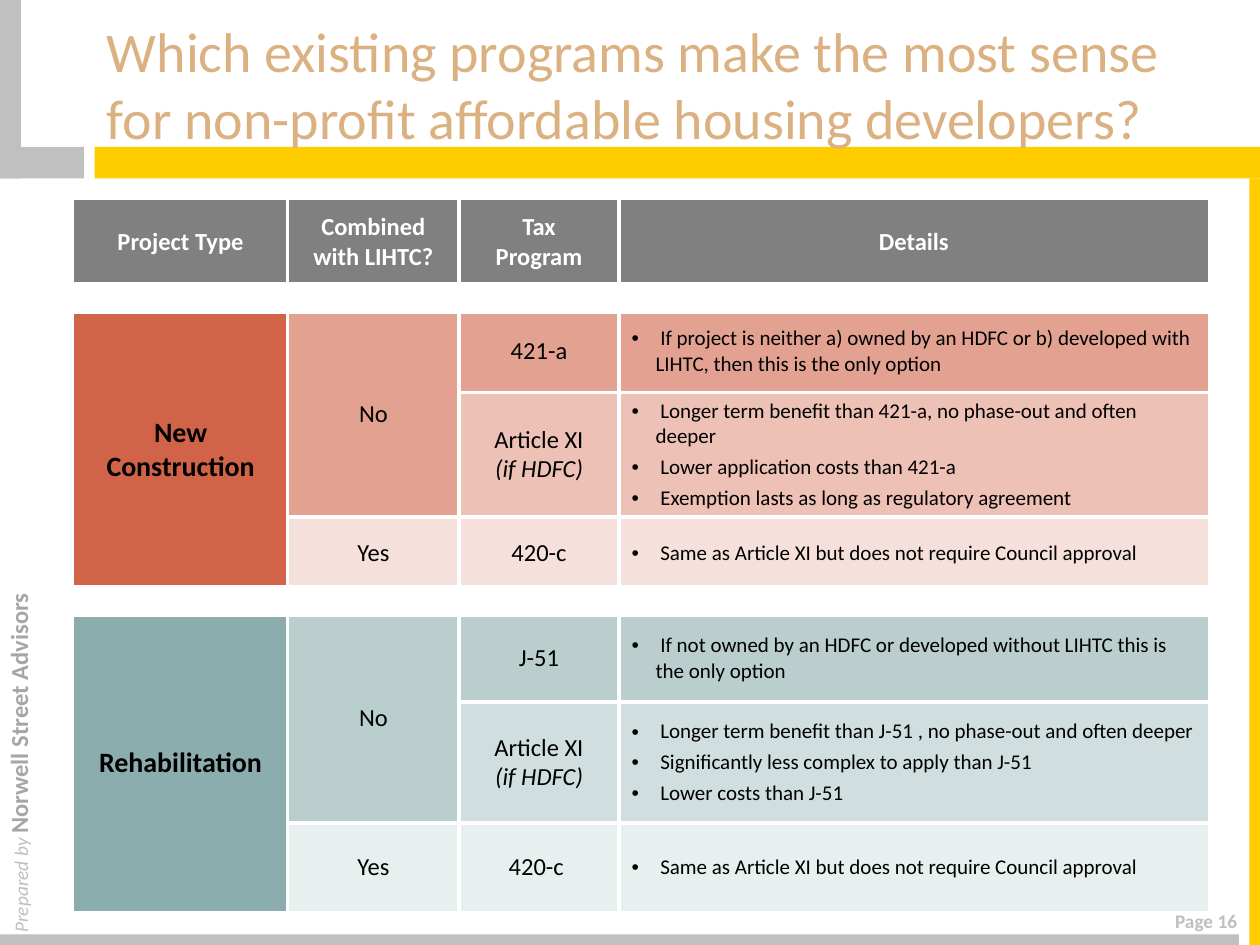
from lxml import etree
from pptx import Presentation
from pptx.dml.color import RGBColor
from pptx.enum.shapes import MSO_SHAPE
from pptx.enum.text import MSO_ANCHOR, PP_ALIGN
from pptx.oxml.ns import qn
from pptx.util import Inches, Pt

RECT = MSO_SHAPE.RECTANGLE
MIDDLE, TOP = MSO_ANCHOR.MIDDLE, MSO_ANCHOR.TOP
LEFT, CENTER, RIGHT = PP_ALIGN.LEFT, PP_ALIGN.CENTER, PP_ALIGN.RIGHT

GRID_COLS, GRID_ROWS = 120, 90
GRAY, YELLOW, WHITE, BLACK = "C0C0C0", "FFCC00", "FFFFFF", "000000"

COL_WIDTHS = [1.7, 1.36, 1.27, 4.68]
ROW_HEIGHTS = [0.68, 0.2, 0.65, 0.99, 0.57, 0.2, 0.7, 0.96, 0.7]
COL_EDGES = [1, 2.25, 2.25, 2.25, 1]
ROW_EDGES = [1, 4.5, 4.5, 2.25, 2.25, 4.5, 4.5, 2.25, 2.25, 1]
SPACER_ROWS = [1, 5]

HEADERS = [["Project Type"], ["Combined with LIHTC?"], ["Tax", "Program"], ["Details"]]
SAME_AS_XI = [" Same as Article XI but does not require Council approval"]
ARTICLE_XI = ["Article XI", "(if HDFC)"]
# first row, project type, its colour, then (tint, tax program, details) for each row
BLOCKS = [
    (2, "New Construction", "D16349", [
        ("E3A192", ["421-a"],
         [" If project is neither a) owned by an HDFC or b) developed with LIHTC, "
          "then this is the only option"]),
        ("EDC1B6", ARTICLE_XI,
         [" Longer term benefit than 421-a, no phase-out and often deeper",
          " Lower application costs than 421-a",
          " Exemption lasts as long as regulatory agreement"]),
        ("F6E0DB", ["420-c"], SAME_AS_XI)]),
    (6, "Rehabilitation", "8CADAE", [
        ("BACECE", ["J-51"],
         [" If not owned by an HDFC or developed without LIHTC this is the only option"]),
        ("D1DEDF", ARTICLE_XI,
         [" Longer term benefit than J-51 , no phase-out and often deeper",
          " Significantly less complex to apply than J-51",
          " Lower costs than J-51"]),
        ("E8EFEF", ["420-c "], SAME_AS_XI)]),
]


def rgb(color):
    return RGBColor.from_string(color)


class SlideBuilder:
    """Places elements on a slide divided into 120 columns and 90 rows."""

    def __init__(self, prs, font):
        self.font = font
        self.col = prs.slide_width / GRID_COLS
        self.row = prs.slide_height / GRID_ROWS
        self.slide = prs.slides.add_slide(prs.slide_layouts[6])

    def box(self, x, y, w, h):
        return [round(v) for v in (x * self.col, y * self.row, w * self.col, h * self.row)]

    def style(self, r, size, color, bold=False, italic=False):
        r.font.name, r.font.size = self.font, Pt(size)
        r.font.bold, r.font.italic = bold, italic
        r.font.color.rgb = rgb(color)

    def bar(self, place, color, rotation=0):
        s = self.slide.shapes.add_shape(RECT, *self.box(*place))
        s.rotation = rotation
        s.shadow.inherit = False
        s.fill.solid()
        s.fill.fore_color.rgb = rgb(color)
        s.line.fill.background()

    def text(self, place, runs, align=LEFT, anchor=TOP, rotation=0):
        """Each run is (text, size, colour, bold, italic)."""
        s = self.slide.shapes.add_textbox(*self.box(*place))
        s.rotation = rotation
        tf = s.text_frame
        tf.word_wrap, tf.vertical_anchor = True, anchor
        p = tf.paragraphs[0]
        p.alignment = align
        for text, *look in runs:
            r = p.add_run()
            r.text = text
            self.style(r, *look)

    def table(self, x, y, widths, heights):
        frame = self.slide.shapes.add_table(
            len(heights), len(widths), *self.box(x, y, 108, 67.7))
        table = frame.table
        table.first_row = table.horz_banding = False
        for column, width in zip(table.columns, widths):
            column.width = Inches(width)
        for row, height in zip(table.rows, heights):
            row.height = Inches(height)
        return table

    def borders(self, cell, row, col, span):
        edges = {"L": COL_EDGES[col], "R": COL_EDGES[col + 1],
                 "T": ROW_EDGES[row], "B": ROW_EDGES[row + span]}
        props = cell._tc.get_or_add_tcPr()
        for side, width in edges.items():
            line = etree.SubElement(props, qn(f"a:ln{side}"), w=str(Pt(width)))
            fill = etree.SubElement(line, qn("a:solidFill"))
            etree.SubElement(fill, qn("a:srgbClr"), val=WHITE)

    def cell(self, table, row, col, fill, lines=(), size=14, color=BLACK,
             bold=False, bullets=False, span=1):
        """Fill one cell; lines in brackets are italic."""
        cell = table.cell(row, col)
        if span > 1:
            cell.merge(table.cell(row + span - 1, col))
        cell.vertical_anchor = MIDDLE
        cell.margin_top = cell.margin_bottom = Inches(0.03)
        self.borders(cell, row, col, span)
        cell.fill.solid()
        cell.fill.fore_color.rgb = rgb(fill)
        if not lines:
            p = cell.text_frame.paragraphs[0]
            etree.SubElement(p._p, qn("a:endParaRPr"), sz="400")
            return
        cell.text_frame.text = "\n".join(lines)
        for p, line in zip(cell.text_frame.paragraphs, lines):
            p.alignment = LEFT if bullets else CENTER
            if bullets:
                self.bullet(p)
            self.style(p.runs[0], size, color, bold, line.startswith("("))

    def bullet(self, p):
        p.space_after = Pt(3)
        props = p._p.get_or_add_pPr()
        indent = Inches(0.19)
        props.set("marL", str(indent))
        props.set("indent", str(-indent))
        etree.SubElement(props, qn("a:buFont"), typeface="Arial")
        etree.SubElement(props, qn("a:buChar"), char="•")


def add_frame(b):
    b.bar((0, 14, 8, 3), GRAY)
    b.bar((9, 14, 111, 3), YELLOW)
    b.bar((119, 17, 1, 73), YELLOW)
    b.bar((0, 89, 118, 1), GRAY)
    b.text((79, 86, 40, 3.5), [("Page 16", 11, "BFBFBF", True)], RIGHT)
    b.bar((-7.5, 7.5, 17, 2), GRAY, 270)
    b.text((-20.75, 65.5, 45, 4),
           [("Prepared by ", 11, "BFBFBF", False, True),
            ("Norwell Street Advisors", 14, "A6A6A6", True)], rotation=270)


def add_program_table(b):
    table = b.table(7, 19, COL_WIDTHS, ROW_HEIGHTS)
    for col, lines in enumerate(HEADERS):
        b.cell(table, 0, col, "808080", lines, color=WHITE, bold=True)
        for row in SPACER_ROWS:
            b.cell(table, row, col, WHITE)
    for first, project, color, programs in BLOCKS:
        b.cell(table, first, 0, color, [project], 16, bold=True, span=3)
        b.cell(table, first, 1, programs[0][0], ["No"], span=2)
        b.cell(table, first + 2, 1, programs[2][0], ["Yes"])
        for row, (tint, program, details) in enumerate(programs, first):
            b.cell(table, row, 2, tint, program)
            b.cell(table, row, 3, tint, details, 12, bullets=True)


def main():
    prs = Presentation()
    prs.slide_width, prs.slide_height = Inches(10), Inches(7.5)
    b = SlideBuilder(prs, "Calibri")
    add_frame(b)
    b.text((9, 2, 109, 12),
           [("Which existing programs make the most sense for non-profit "
             "affordable housing developers?", 32, "DCB181")], anchor=MIDDLE)
    add_program_table(b)
    prs.save("out.pptx")


if __name__ == "__main__":
    main()
